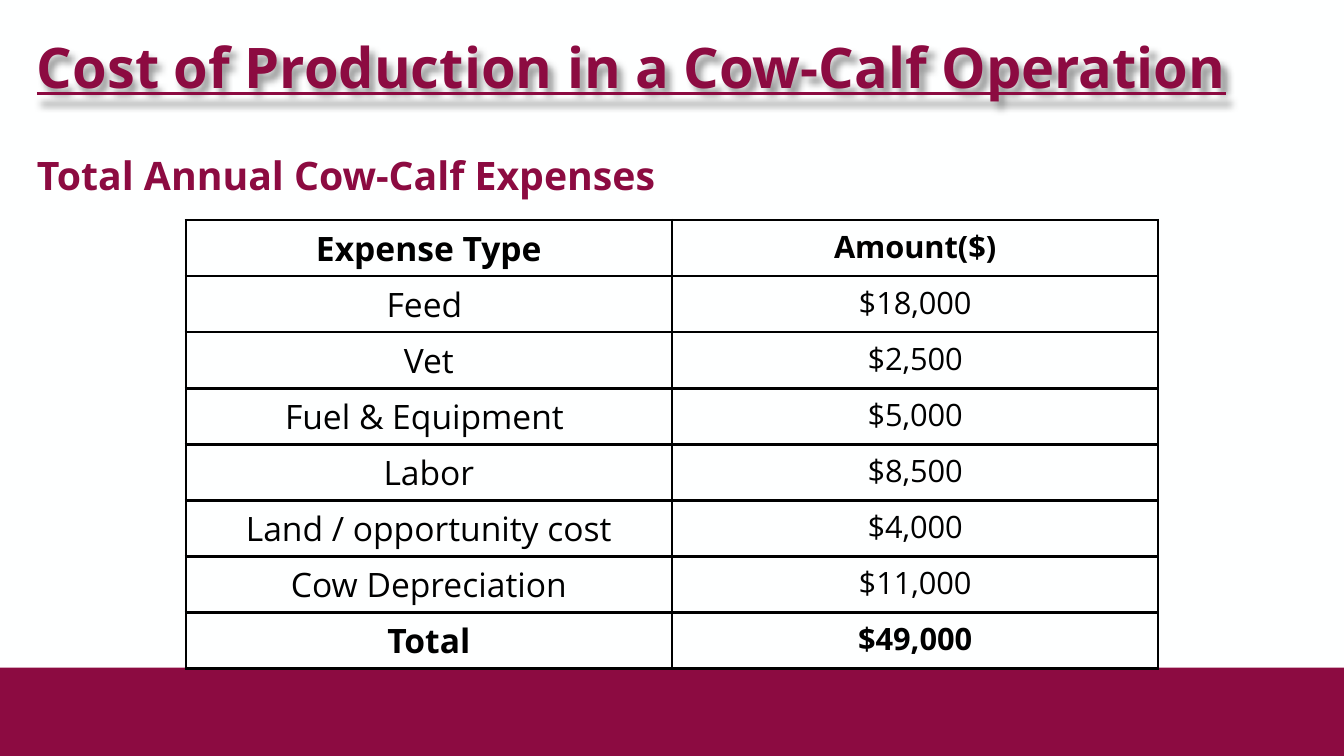
from dataclasses import dataclass

from lxml import etree
from pptx import Presentation
from pptx.dml.color import RGBColor
from pptx.enum.shapes import MSO_SHAPE
from pptx.enum.text import MSO_ANCHOR, PP_ALIGN
from pptx.oxml import parse_xml
from pptx.oxml.ns import nsdecls, qn
from pptx.util import Cm, Pt

RECTANGLE = MSO_SHAPE.RECTANGLE
TOP, MIDDLE = MSO_ANCHOR.TOP, MSO_ANCHOR.MIDDLE
CENTER = PP_ALIGN.CENTER

FONT = "Open Sans"
COLORS = {"background": "FEFFFF", "maroon": "8C0B41", "black": "000000"}
SLIDE_WIDTH, SLIDE_HEIGHT = Cm(25.4), Cm(14.29)
BAND_TOP = Cm(12.62)
ROW_HEIGHT = Cm(1.06)
COLUMN_WIDTH = Cm(9.19)
COLUMN_SIZES = (18, 16.5)


@dataclass
class Heading:
    text: str
    top: float
    height: float
    size: float
    anchor: MSO_ANCHOR = TOP
    line_spacing: float = 1.0
    underline: bool = False
    shadow: bool = False


@dataclass
class Expense:
    kind: str
    amount: str
    bold: bool = False


HEADINGS = [
    Heading("Cost of Production in a Cow-Calf Operation", 0.51, 1.9, 30,
            underline=True, shadow=True),
    Heading("Total Annual Cow-Calf Expenses", 1.78, 2.59, 21,
            anchor=MIDDLE, line_spacing=1.5),
]

EXPENSES = [
    Expense("Expense Type", "Amount($)", bold=True),
    Expense("Feed ", "$18,000"),
    Expense("Vet", "$2,500"),
    Expense("Fuel & Equipment ", "$5,000"),
    Expense("Labor", "$8,500"),
    Expense("Land / opportunity cost", "$4,000"),
    Expense("Cow Depreciation", "$11,000"),
    Expense("Total", "$49,000", bold=True),
]


def rgb(name: str) -> RGBColor:
    return RGBColor.from_string(COLORS[name])


def style_font(paragraph, size: float, color: str, bold: bool) -> None:
    font = paragraph.font
    font.name, font.size, font.bold = FONT, Pt(size), bold
    font.color.rgb = rgb(color)


def add_text_shadow(box) -> None:
    box._element.spPr.append(parse_xml(
        f'<a:effectLst {nsdecls("a")}>'
        '<a:outerShdw blurRad="50800" dist="50800" dir="3600000" algn="tl" rotWithShape="0">'
        f'<a:srgbClr val="{COLORS["black"]}"><a:alpha val="40000"/></a:srgbClr>'
        '</a:outerShdw></a:effectLst>'))


def add_heading(slide, heading: Heading) -> None:
    box = slide.shapes.add_textbox(Cm(0.51), Cm(heading.top), Cm(24.38), Cm(heading.height))
    frame = box.text_frame
    frame.word_wrap = True
    frame.vertical_anchor = heading.anchor
    frame.margin_left = frame.margin_right = Cm(0.19)
    frame.margin_top = frame.margin_bottom = Cm(0.1)
    paragraph = frame.paragraphs[0]
    paragraph.text = heading.text
    paragraph.line_spacing = heading.line_spacing
    style_font(paragraph, heading.size, "maroon", True)
    paragraph.font.underline = heading.underline
    if heading.shadow:
        add_text_shadow(box)


def add_borders(cell) -> None:
    properties = cell._tc.get_or_add_tcPr()
    for position, side in enumerate(("lnL", "lnR", "lnT", "lnB")):
        line = etree.Element(qn(f"a:{side}"), w=str(Pt(1.5)))
        fill = etree.SubElement(line, qn("a:solidFill"))
        etree.SubElement(fill, qn("a:srgbClr"), val=COLORS["black"])
        properties.insert(position, line)


def fill_cell(cell, text: str, size: float, bold: bool) -> None:
    cell.margin_left = cell.margin_right = Cm(0.19)
    cell.margin_top = cell.margin_bottom = Cm(0.1)
    cell.vertical_anchor = TOP
    cell.fill.background()
    paragraph = cell.text_frame.paragraphs[0]
    paragraph.text = text
    paragraph.alignment = CENTER
    style_font(paragraph, size, "black", bold)
    add_borders(cell)


def add_expense_table(slide, expenses: list[Expense]) -> None:
    width = COLUMN_WIDTH * len(COLUMN_SIZES)
    table = slide.shapes.add_table(
        len(expenses), len(COLUMN_SIZES), (SLIDE_WIDTH - width) // 2, Cm(4.16),
        width, ROW_HEIGHT * len(expenses)).table
    table.first_row = table.horz_banding = False
    for row, expense in enumerate(expenses):
        table.rows[row].height = ROW_HEIGHT
        for column, text in enumerate((expense.kind, expense.amount)):
            fill_cell(table.cell(row, column), text, COLUMN_SIZES[column], expense.bold)


def add_footer_band(slide) -> None:
    band = slide.shapes.add_shape(
        RECTANGLE, 0, BAND_TOP, SLIDE_WIDTH, SLIDE_HEIGHT - BAND_TOP)
    band.shadow.inherit = False
    band.fill.solid()
    band.fill.fore_color.rgb = rgb("maroon")
    band.line.fill.background()


def main() -> None:
    presentation = Presentation()
    presentation.slide_width, presentation.slide_height = SLIDE_WIDTH, SLIDE_HEIGHT
    slide = presentation.slides.add_slide(presentation.slide_layouts[6])
    slide.background.fill.solid()
    slide.background.fill.fore_color.rgb = rgb("background")
    add_footer_band(slide)
    for heading in HEADINGS:
        add_heading(slide, heading)
    add_expense_table(slide, EXPENSES)
    presentation.save("out.pptx")


if __name__ == "__main__":
    main()
